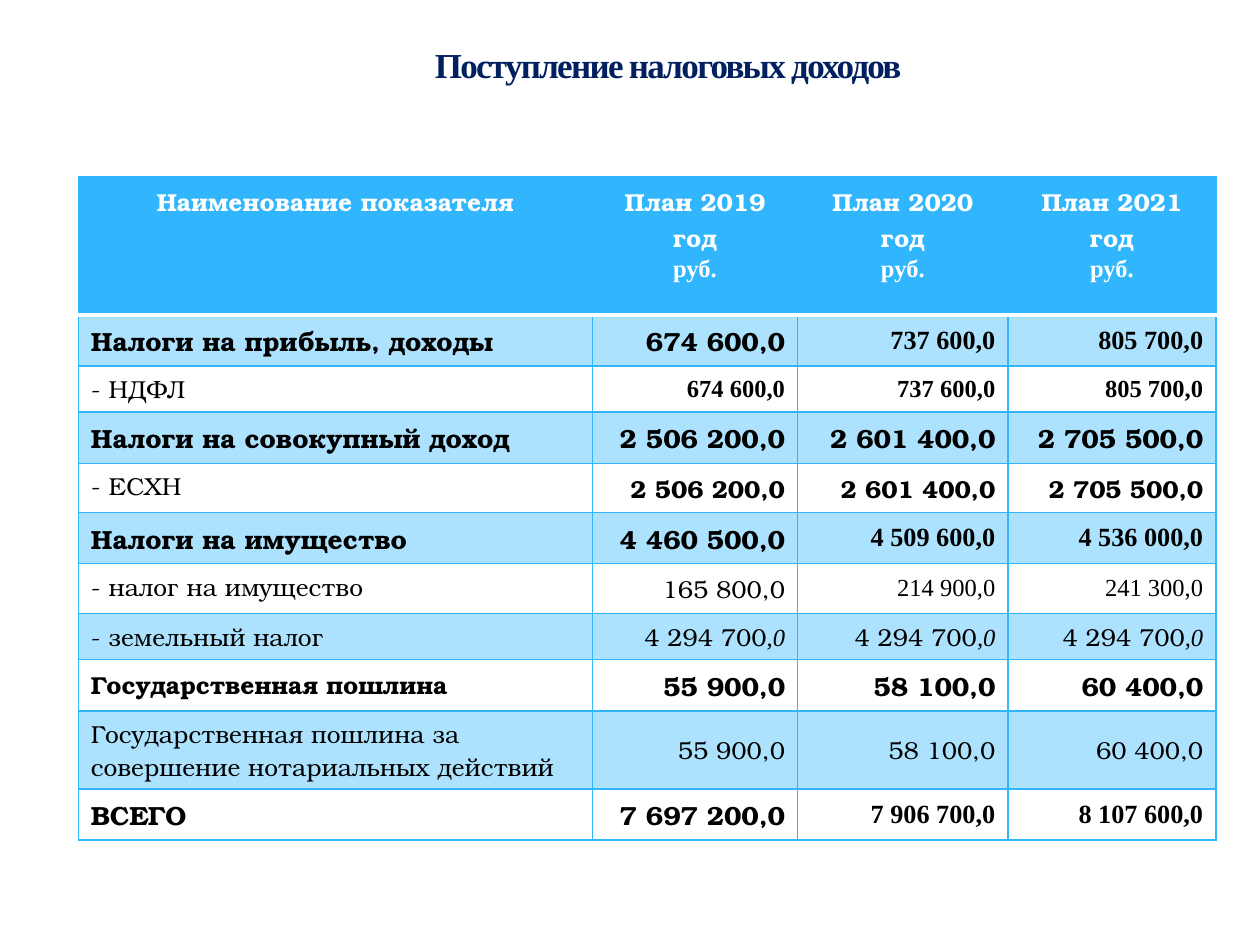
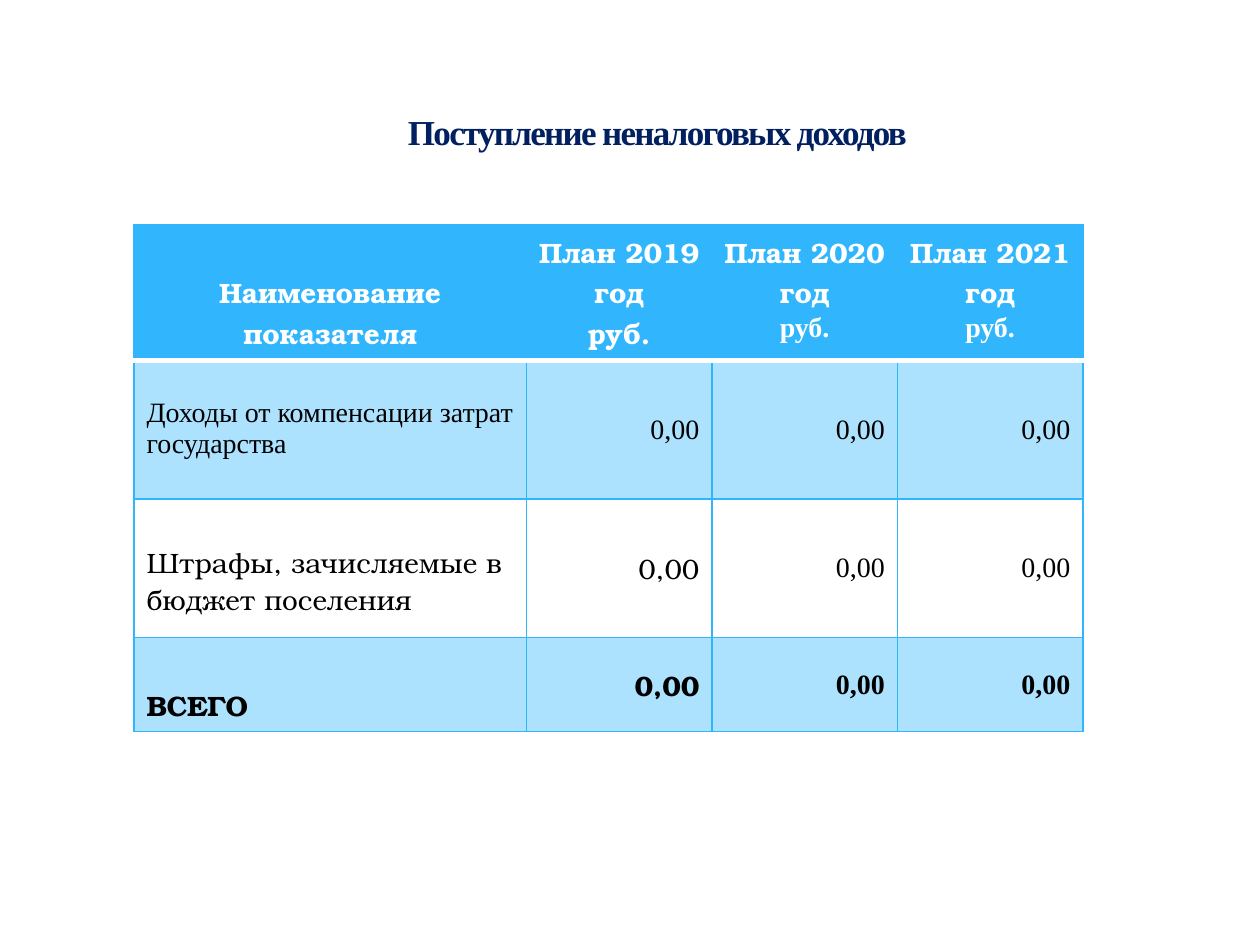
from dataclasses import dataclass

from lxml.etree import SubElement
from pptx import Presentation
from pptx.dml.color import RGBColor
from pptx.enum.text import MSO_ANCHOR, MSO_AUTO_SIZE, PP_ALIGN
from pptx.oxml.ns import qn
from pptx.util import Cm, Pt

# Shared look
SKY = RGBColor(0x31, 0xB6, 0xFD)
PALE_SKY = RGBColor(0xAD, 0xE2, 0xFE)
NAVY = RGBColor(0x00, 0x20, 0x60)
WHITE = RGBColor(0xFF, 0xFF, 0xFF)
BLACK = RGBColor(0x00, 0x00, 0x00)
BONUM = "TeX Gyre Bonum"
TIMES = "Times New Roman"
TITLE_ONLY = 5
YEARS = (2019, 2020, 2021)

# Fonts of the three value columns
ALL_BONUM = (BONUM,) * 3
ALL_TIMES = (TIMES,) * 3
FIRST_BONUM = (BONUM, TIMES, TIMES)


@dataclass
class IncomeRow:
    label: str
    amounts: tuple
    height: float
    fonts: tuple = ALL_BONUM
    label_font: str = BONUM
    label_size: int = 14
    amount_size: int = 14
    label_bold: bool = False
    amount_bold: bool = False
    label_top: float = 0.13
    italic_decimals: bool = False


def group_row(label, amounts, height, **options):
    """A bold summary row."""
    look = dict(label_size=15, amount_size=15, label_bold=True, amount_bold=True)
    return IncomeRow(label, amounts, height, **{**look, **options})


NDFL = ("674 600,0", "737 600,0", "805 700,0")
ESHN = ("2 506 200,0", "2 601 400,0", "2 705 500,0")
DUTY = ("55 900,0", "58 100,0", "60 400,0")
NOTHING = ("0,00",) * 3

TAX_ROWS = [
    group_row("Налоги на прибыль, доходы", NDFL, 1.03, fonts=FIRST_BONUM),
    IncomeRow("- НДФЛ", NDFL, 0.93, fonts=ALL_TIMES, amount_bold=True),
    group_row("Налоги на совокупный доход", ESHN, 1.03),
    IncomeRow("- ЕСХН", ESHN, 0.99, amount_bold=True),
    group_row("Налоги на имущество", ("4 460 500,0", "4 509 600,0", "4 536 000,0"),
              1.02, fonts=FIRST_BONUM),
    IncomeRow("- налог на имущество", ("165 800,0", "214 900,0", "241 300,0"),
              1.01, fonts=FIRST_BONUM),
    IncomeRow("- земельный налог", ("4 294 700,0",) * 3, 0.93, italic_decimals=True),
    group_row("Государственная пошлина", DUTY, 1.03, label_size=14),
    IncomeRow("Государственная пошлина за совершение нотариальных действий", DUTY, 1.57),
    group_row("ВСЕГО", ("7 697 200,0", "7 906 700,0", "8 107 600,0"), 1.03,
              fonts=FIRST_BONUM),
]

NON_TAX_ROWS = [
    IncomeRow("Доходы от компенсации затрат государства", NOTHING, 2.79,
              fonts=ALL_TIMES, label_font=TIMES, label_size=16, amount_size=16,
              label_top=0.75),
    IncomeRow("Штрафы, зачисляемые в бюджет поселения", NOTHING, 2.79,
              fonts=FIRST_BONUM, label_size=16, amount_size=16, label_top=0.9),
    group_row("ВСЕГО", NOTHING, 1.9, fonts=FIRST_BONUM, label_size=16,
              amount_size=16, label_top=0.95),
]


def add_text(paragraph, text, font=BONUM, size=14, color=BLACK, bold=False,
             italic=False, align=PP_ALIGN.LEFT, tracking=None):
    """Append one formatted run to a paragraph."""
    paragraph.alignment = align
    run = paragraph.add_run()
    run.text = text
    run.font.name = font
    run.font.size = Pt(size)
    run.font.color.rgb = color
    run.font.bold = bold
    run.font.italic = italic
    if tracking is not None:
        run.font._element.set("spc", str(tracking))


def add_title(slide, text, left, top, width, height):
    title = slide.shapes.title
    title.left, title.top, title.width, title.height = map(
        Cm, (left, top, width, height))
    frame = title.text_frame
    frame.auto_size = MSO_AUTO_SIZE.NONE
    frame.word_wrap = True
    frame.vertical_anchor = MSO_ANCHOR.MIDDLE
    add_text(frame.paragraphs[0], text, font=TIMES, size=20, color=NAVY, bold=True,
             align=PP_ALIGN.CENTER, tracking=-100)


def set_borders(cell, **special):
    """Thin blue borders, except sides given as side=(colour, points)."""
    properties = cell._tc.get_or_add_tcPr()
    for side in "LRTB":
        color, points = special.get(side, (SKY, 1))
        line = SubElement(properties, qn(f"a:ln{side}"), w=str(Pt(points)))
        fill = SubElement(line, qn("a:solidFill"))
        SubElement(fill, qn("a:srgbClr"), val=str(color))


def paint(cell, color):
    if color is None:
        cell.fill.background()
    else:
        cell.fill.solid()
        cell.fill.fore_color.rgb = color


def fill_header(cells, size, unit_fonts, label_top):
    for cell in cells:
        set_borders(cell, B=(WHITE, 3))
        paint(cell, SKY)
    style = dict(size=size, color=WHITE, bold=True, align=PP_ALIGN.CENTER)
    cells[0].margin_top = Cm(label_top)
    add_text(cells[0].text_frame.paragraphs[0], "Наименование показателя", **style)
    for cell, year, unit_font in zip(cells[1:], YEARS, unit_fonts):
        frame = cell.text_frame
        add_text(frame.paragraphs[0], f"План {year} год", **style)
        add_text(frame.add_paragraph(), "руб.", font=unit_font, **style)


def fill_income(cells, income, first, shaded):
    for cell in cells:
        set_borders(cell, **({"T": (WHITE, 3)} if first else {}))
        paint(cell, PALE_SKY if shaded else None)
    label, *amounts = cells
    label.margin_top = Cm(income.label_top)
    add_text(label.text_frame.paragraphs[0], income.label, font=income.label_font,
             size=income.label_size, bold=income.label_bold)
    style = dict(size=income.amount_size, bold=income.amount_bold,
                 align=PP_ALIGN.RIGHT)
    for cell, amount, font in zip(amounts, income.amounts, income.fonts):
        cell.vertical_anchor = MSO_ANCHOR.MIDDLE
        paragraph = cell.text_frame.paragraphs[0]
        if income.italic_decimals:
            whole, decimals = amount.split(",")
            add_text(paragraph, whole, font=font, **style)
            add_text(paragraph, "," + decimals, font=TIMES, italic=True, **style)
        else:
            add_text(paragraph, amount, font=font, **style)


def add_income_table(slide, incomes, left, top, widths, header_height,
                     header_size, unit_fonts=ALL_TIMES, header_top=0.13):
    heights = [header_height] + [income.height for income in incomes]
    table = slide.shapes.add_table(
        len(heights), len(widths), Cm(left), Cm(top),
        Cm(sum(widths)), Cm(sum(heights))).table
    table.horz_banding = False
    for column, width in zip(table.columns, widths):
        column.width = Cm(width)
    for row, height in zip(table.rows, heights):
        row.height = Cm(height)
    header, *body = [list(row.cells) for row in table.rows]
    fill_header(header, header_size, unit_fonts, header_top)
    for index, (cells, income) in enumerate(zip(body, incomes)):
        fill_income(cells, income, first=index == 0, shaded=index % 2 == 0)


def main():
    deck = Presentation()
    deck.slide_width, deck.slide_height = Cm(25.4), Cm(19.05)
    layout = deck.slide_layouts[TITLE_ONLY]

    # Tax income
    tax = deck.slides.add_slide(layout)
    add_income_table(tax, TAX_ROWS, 1.58, 3.57, (10.36, 4.14, 4.24, 4.19),
                     header_height=2.78, header_size=14)
    add_title(tax, "Поступление налоговых доходов", 4.17, 0.6, 18.59, 1.4)

    # Non-tax income
    non_tax = deck.slides.add_slide(layout)
    add_income_table(non_tax, NON_TAX_ROWS, 2.7, 4.53, (7.91, 3.74, 3.74, 3.74),
                     header_height=2.74, header_size=16,
                     unit_fonts=FIRST_BONUM, header_top=0.95)
    add_title(non_tax, "Поступление неналоговых доходов", 3.5, 1.72, 19.5, 1.88)

    deck.save("out.pptx")


if __name__ == "__main__":
    main()
